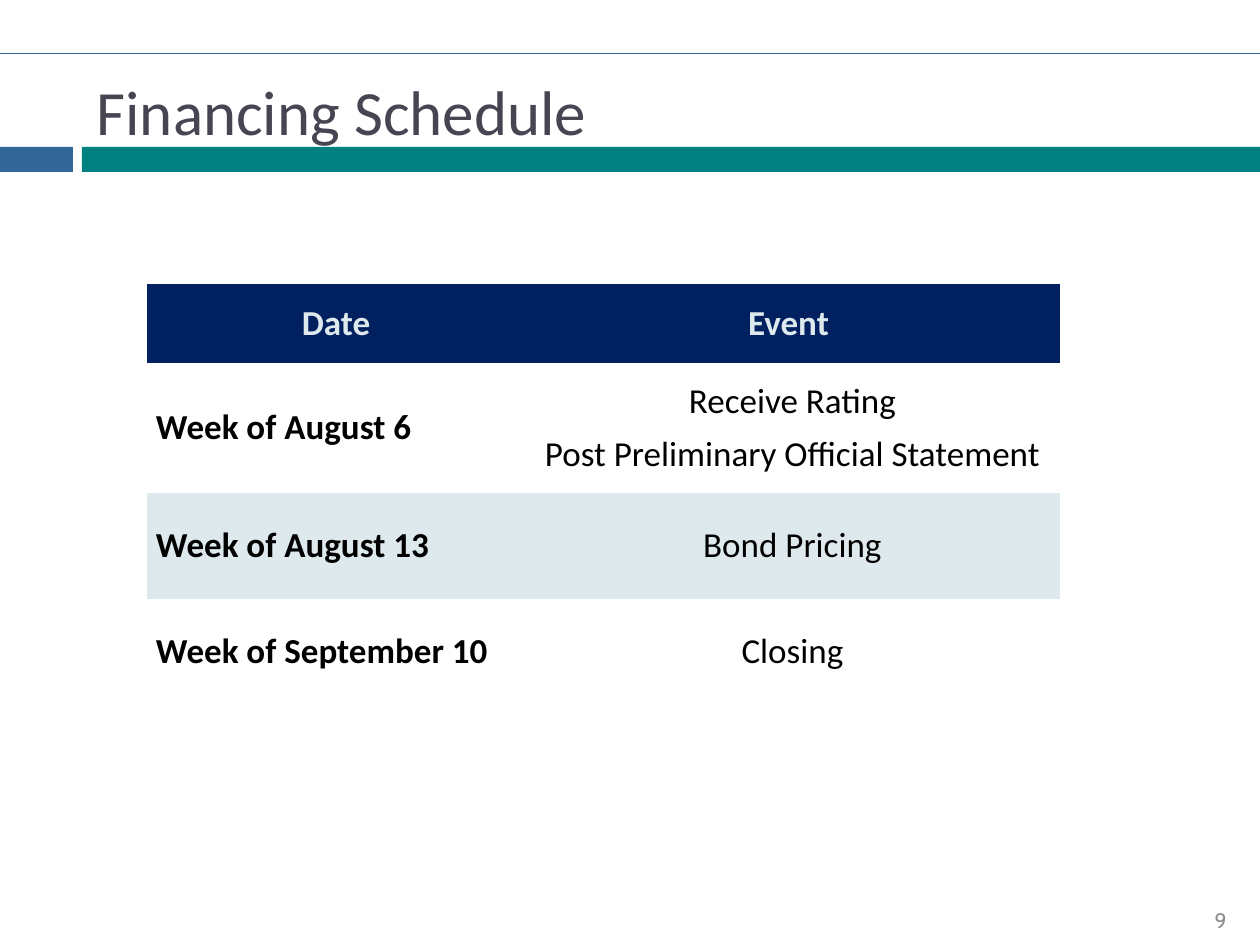
from dataclasses import dataclass

import pptx
import pptx.dml.color
import pptx.enum.shapes
import pptx.enum.text
import pptx.oxml
import pptx.oxml.ns
import pptx.util

PX_PER_INCH = 126
ALIGN = pptx.enum.text.PP_ALIGN
MIDDLE = pptx.enum.text.MSO_ANCHOR.MIDDLE


@dataclass(frozen=True)
class Theme:
    white: str = "FFFFFF"
    blue: str = "336699"
    teal: str = "008080"
    navy: str = "002060"
    pale: str = "DDE9EC"
    black: str = "000000"
    title: str = "464653"
    grey: str = "8C8C8C"
    font: str = "Calibri"
    number_font: str = "Cabin"
    title_size: int = 36
    table_size: int = 20
    number_size: int = 12


@dataclass(frozen=True)
class Bar:
    left: int
    top: int
    width: int
    height: int
    color: str


@dataclass(frozen=True)
class Row:
    height: int
    date: str
    events: tuple[str, ...]
    fill: str | None = None
    header: bool = False


THEME = Theme()
BARS = (
    Bar(0, 147, 1260, 44, THEME.white),
    Bar(0, 147, 73, 25, THEME.blue),
    Bar(82, 147, 1178, 25, THEME.teal),
)
COLUMNS = (378, 535)
ROWS = (
    Row(79, "Date", ("Event ",), THEME.navy, header=True),
    Row(130, "Week of August 6", ("Receive Rating", "Post Preliminary Official Statement")),
    Row(106, "Week of August 13", ("Bond Pricing",), THEME.pale),
    Row(106, "Week of September 10", ("Closing",)),
)


def px(length: int) -> int:
    return round(length * pptx.util.Inches(1) / PX_PER_INCH)


def rgb(color: str) -> pptx.dml.color.RGBColor:
    return pptx.dml.color.RGBColor.from_string(color)


def format_para(para, size: int, color: str, align, font: str = THEME.font, bold: bool = False) -> None:
    para.alignment = align
    for span in para.runs:
        span.font.name = font
        span.font.size = pptx.util.Pt(size)
        span.font.bold = bold
        span.font.color.rgb = rgb(color)


def add_rule(page, top: int) -> None:
    rule = page.shapes.add_connector(
        pptx.enum.shapes.MSO_CONNECTOR.STRAIGHT, 0, px(top), px(1260), px(top))
    rule.line.color.rgb = rgb(THEME.blue)
    rule.line.width = pptx.util.Pt(0.5)
    properties = rule.element.find(pptx.oxml.ns.qn("p:spPr"))
    properties.append(pptx.oxml.parse_xml(f"<a:effectLst {pptx.oxml.ns.nsdecls('a')}/>"))


def add_bar(page, bar: Bar) -> None:
    shape = page.shapes.add_shape(
        pptx.enum.shapes.MSO_SHAPE.RECTANGLE,
        px(bar.left), px(bar.top), px(bar.width), px(bar.height))
    shape.shadow.inherit = False
    shape.fill.solid()
    shape.fill.fore_color.rgb = rgb(bar.color)
    shape.line.fill.background()


def set_title(page, text: str) -> None:
    """Place the title placeholder in front of the bars."""
    title = page.shapes.title
    title.element.getparent().append(title.element)
    title.left, title.top, title.width, title.height = px(84), px(63), px(1124), px(94)
    frame = title.text_frame
    frame.text = text
    frame.auto_size = pptx.enum.text.MSO_AUTO_SIZE.NONE
    frame.vertical_anchor = MIDDLE
    format_para(frame.paragraphs[0], THEME.title_size, THEME.title, ALIGN.LEFT)


def add_page_number(page, number: str) -> None:
    box = page.shapes.add_textbox(px(945), px(895), px(294), px(50))
    frame = box.text_frame
    frame.word_wrap = True
    frame.vertical_anchor = MIDDLE
    frame.text = number
    format_para(frame.paragraphs[0], THEME.number_size, THEME.grey, ALIGN.RIGHT, THEME.number_font)


def fill_cell(cell, lines: tuple[str, ...], row: Row, align, bold: bool) -> None:
    cell.vertical_anchor = MIDDLE
    cell.margin_left = cell.margin_right = px(9)
    cell.margin_top = cell.margin_bottom = 0
    if row.fill:
        cell.fill.solid()
        cell.fill.fore_color.rgb = rgb(row.fill)
    else:
        cell.fill.background()
    cell.text_frame.text = "\n".join(lines)
    color = THEME.pale if row.header else THEME.black
    for index, para in enumerate(cell.text_frame.paragraphs):
        format_para(para, THEME.table_size, color, align, bold=bold)
        if index:
            para.space_before = pptx.util.Pt(6)


def add_schedule(page, left: int, top: int) -> None:
    height = sum(row.height for row in ROWS)
    table = page.shapes.add_table(
        len(ROWS), len(COLUMNS), px(left), px(top), px(sum(COLUMNS)), px(height)).table
    table.horz_banding = False
    table.first_row = False
    for column, width in zip(table.columns, COLUMNS):
        column.width = px(width)
    for index, row in enumerate(ROWS):
        table.rows[index].height = px(row.height)
        date_align = ALIGN.CENTER if row.header else ALIGN.LEFT
        fill_cell(table.cell(index, 0), (row.date,), row, date_align, bold=True)
        fill_cell(table.cell(index, 1), row.events, row, ALIGN.CENTER, bold=row.header)
    # The "No Style, No Grid" table style leaves the cells without borders.
    style = table._tbl.tblPr.find(pptx.oxml.ns.qn("a:tableStyleId"))
    style.text = "{2D5ABB26-0587-4C30-8999-92F81FD0307C}"


def main() -> None:
    deck = pptx.Presentation()
    deck.slide_width, deck.slide_height = pptx.util.Inches(10), pptx.util.Inches(7.5)
    page = deck.slides.add_slide(deck.slide_layouts.get_by_name("Title Only"))
    add_rule(page, 53)
    for bar in BARS:
        add_bar(page, bar)
    set_title(page, "Financing Schedule")
    add_page_number(page, "9")
    add_schedule(page, 147, 284)
    deck.save("out.pptx")


if __name__ == "__main__":
    main()
